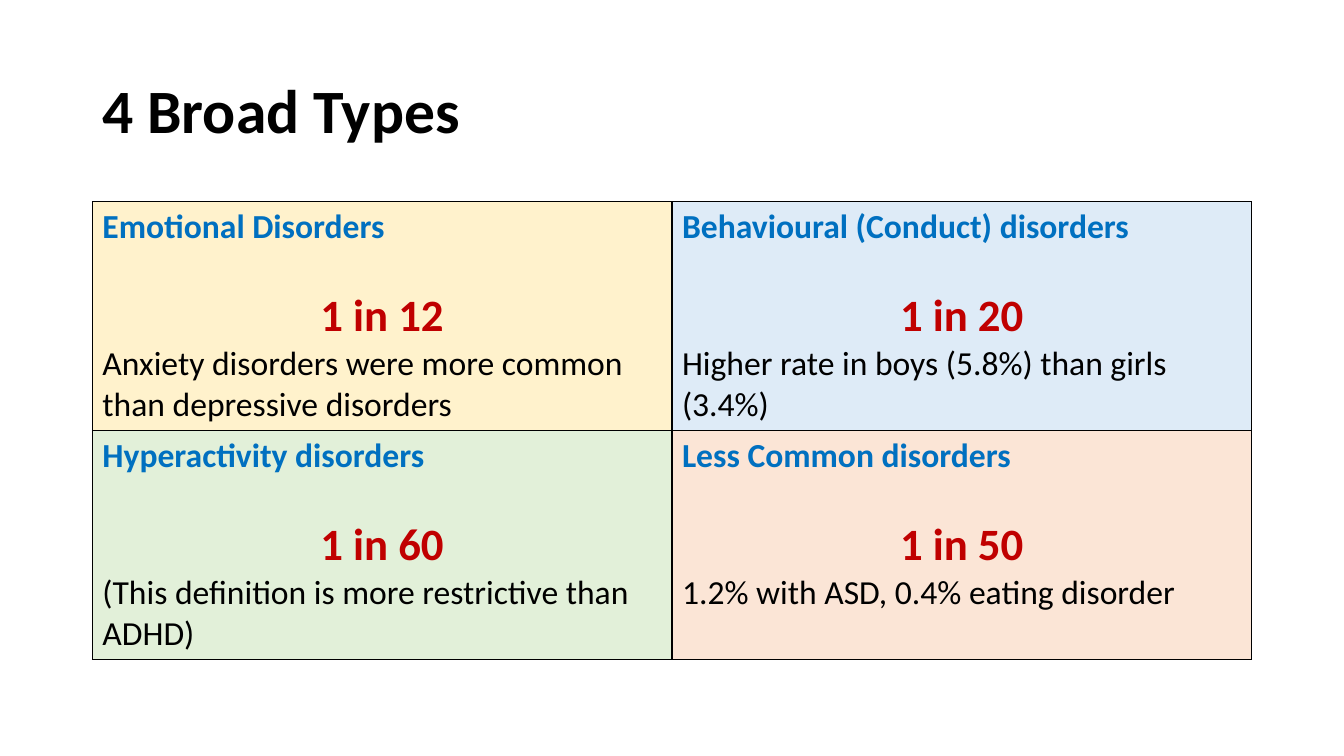
from lxml import etree
from pptx import Presentation
from pptx.dml.color import RGBColor
from pptx.enum.text import MSO_ANCHOR, PP_ALIGN
from pptx.oxml.ns import qn
from pptx.util import Pt

MIDDLE = MSO_ANCHOR.MIDDLE
LEFT, CENTER = PP_ALIGN.LEFT, PP_ALIGN.CENTER

FONT = "Calibri"
BLACK = RGBColor(0x00, 0x00, 0x00)
BLUE = RGBColor(0x00, 0x70, 0xC0)
RED = RGBColor(0xC0, 0x00, 0x00)
YELLOW_TINT = RGBColor(0xFF, 0xF2, 0xCC)
BLUE_TINT = RGBColor(0xDE, 0xEB, 0xF7)
GREEN_TINT = RGBColor(0xE2, 0xF0, 0xD9)
ORANGE_TINT = RGBColor(0xFB, 0xE5, 0xD6)

RATE_GAP = Pt(29.3)
DISORDERS = [
    [
        ("Emotional Disorders", "1 in 12",
         "Anxiety disorders were more common than depressive disorders", YELLOW_TINT),
        ("Behavioural (Conduct) disorders", "1 in 20",
         "Higher rate in boys (5.8%) than girls (3.4%)", BLUE_TINT),
    ],
    [
        ("Hyperactivity disorders", "1 in 60",
         "(This definition is more restrictive than ADHD)", GREEN_TINT),
        ("Less Common disorders", "1 in 50",
         "1.2% with ASD, 0.4% eating disorder", ORANGE_TINT),
    ],
]


def write_run(paragraph, text, size, color, bold):
    run = paragraph.add_run()
    run.text = text
    run.font.name = FONT
    run.font.size = Pt(size)
    run.font.bold = bold
    run.font.color.rgb = color


def add_title(slide, text, left, top, width, height):
    frame = slide.shapes.add_textbox(left, top, width, height).text_frame
    frame.word_wrap = True
    frame.vertical_anchor = MIDDLE
    heading = frame.paragraphs[0]
    heading.line_spacing = 0.9
    write_run(heading, text, 44, BLACK, True)


def set_borders(cell, color, width):
    properties = cell._tc.get_or_add_tcPr()
    for side in ("a:lnL", "a:lnR", "a:lnT", "a:lnB"):
        line = etree.SubElement(properties, qn(side), w=str(width))
        fill = etree.SubElement(line, qn("a:solidFill"))
        etree.SubElement(fill, qn("a:srgbClr"), val=str(color))


def fill_disorder_cell(cell, name, rate, remark, tint):
    set_borders(cell, BLACK, Pt(1))
    cell.fill.solid()
    cell.fill.fore_color.rgb = tint
    lines = [
        (name, 24, BLUE, True, LEFT, 0),
        (rate, 32, RED, True, CENTER, RATE_GAP),
        (remark, 24, BLACK, False, LEFT, 0),
    ]
    frame = cell.text_frame
    for index, (text, size, color, bold, alignment, gap) in enumerate(lines):
        paragraph = frame.add_paragraph() if index else frame.paragraphs[0]
        paragraph.alignment = alignment
        paragraph.space_before = gap
        write_run(paragraph, text, size, color, bold)


def add_disorder_table(slide, disorders, left, top, width, height):
    rows, columns = len(disorders), len(disorders[0])
    table = slide.shapes.add_table(rows, columns, left, top, width, height).table
    table.first_row = False
    table.horz_banding = False
    for row, entries in enumerate(disorders):
        for column, entry in enumerate(entries):
            fill_disorder_cell(table.cell(row, column), *entry)


def main():
    presentation = Presentation()
    presentation.slide_width, presentation.slide_height = Pt(960), Pt(540)
    slide = presentation.slides.add_slide(presentation.slide_layouts[6])
    left, width = Pt(66), Pt(828)
    add_title(slide, "4 Broad Types", left, Pt(28.75), width, Pt(104.4))
    add_disorder_table(slide, DISORDERS, left, Pt(144), width, Pt(327))
    presentation.save("out.pptx")


if __name__ == "__main__":
    main()
